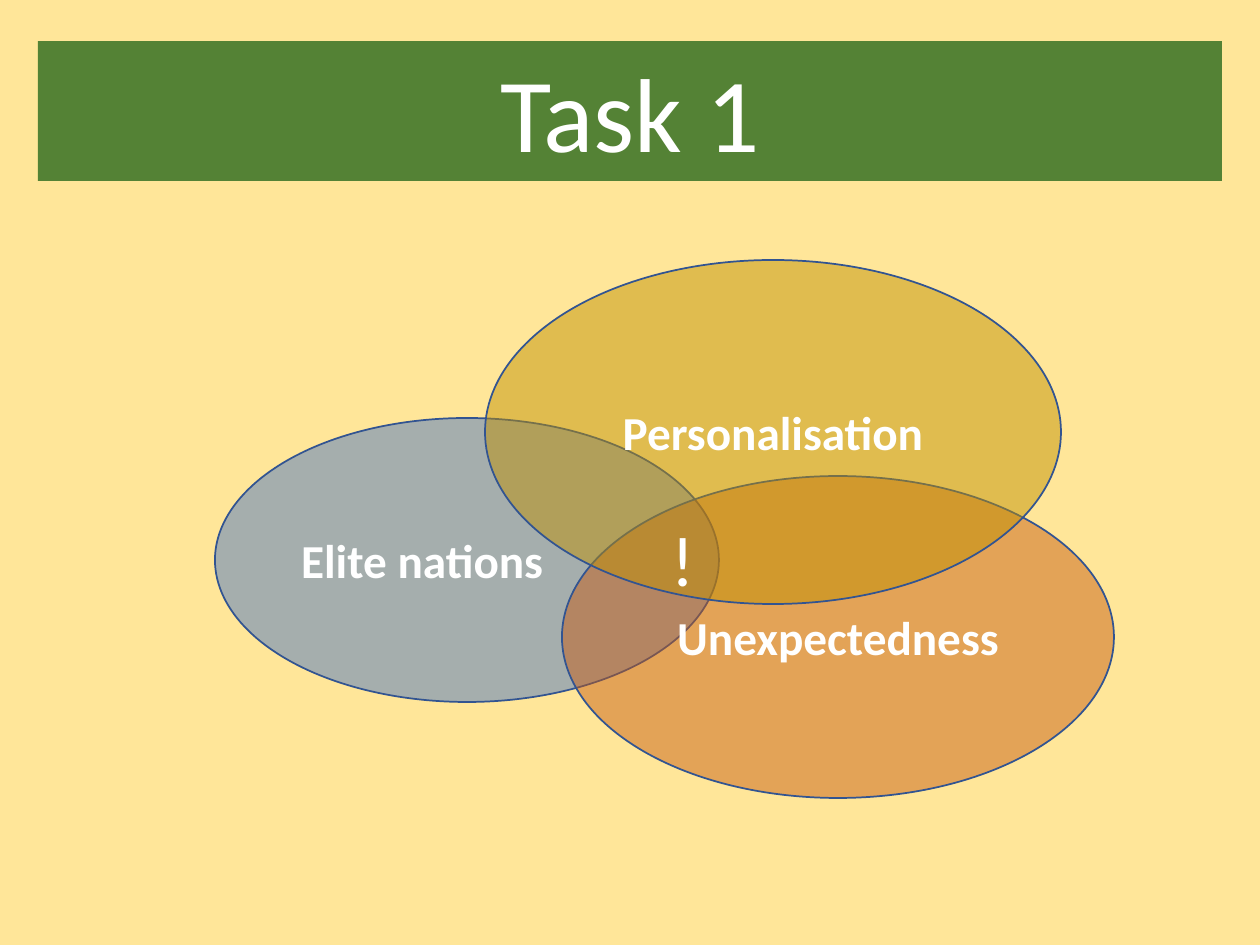
from lxml import etree
from pptx import Presentation
from pptx import util as u
from pptx.dml.color import RGBColor
from pptx.enum import shapes, text
from pptx.oxml.ns import qn

PX = u.Inches(1) / 126
ALPHA = 48
HUES = {
    "page": "FFE699",
    "band": "548235",
    "blue": "4472C4",
    "rust": "C55A11",
    "gold": "BF9000",
    "edge": "325491",
    "text": "FFFFFF",
}
LEFT, MID = text.PP_ALIGN.LEFT, text.PP_ALIGN.CENTER
OVALS = [
    ("Elite nations", "blue", LEFT, (215, 418, 504, 284)),
    ("Unexpectedness", "rust", MID, (562, 476, 552, 322)),
    ("Personalisation", "gold", MID, (485, 260, 576, 344)),
]


def emu(*sizes):
    return [u.Emu(round(size * PX)) for size in sizes]


def paint(fill, hue):
    fill.solid()
    fill.fore_color.rgb = RGBColor.from_string(HUES[hue])


def write(shape, words, size, align, anchor, bold=False):
    frame = shape.text_frame
    frame.text = words
    frame.word_wrap = True
    frame.auto_size = text.MSO_AUTO_SIZE.NONE
    frame.vertical_anchor = anchor
    para = frame.paragraphs[0]
    para.alignment = align
    font = para.font
    font.name, font.size, font.bold = "Calibri", u.Pt(size), bold
    font.color.rgb = RGBColor.from_string(HUES["text"])


def add_title(slide, words, box):
    title = slide.shapes.title
    title.left, title.top, title.width, title.height = emu(*box)
    paint(title.fill, "band")
    write(title, words, 60, MID, text.MSO_ANCHOR.TOP)


def add_oval(slide, words, hue, align, box):
    oval = slide.shapes.add_shape(shapes.MSO_SHAPE.OVAL, *emu(*box))
    oval.shadow.inherit = False
    paint(oval.fill, hue)
    color = oval._element.spPr.find(qn("a:solidFill"))[0]
    etree.SubElement(color, qn("a:alpha"), val=str(ALPHA * 1000))
    paint(oval.line.fill, "edge")
    oval.line.width = u.Pt(1)
    write(oval, words, 27, align, text.MSO_ANCHOR.MIDDLE, bold=True)


def add_mark(slide, words, box):
    mark = slide.shapes.add_textbox(*emu(*box))
    write(mark, words, 40.5, LEFT, text.MSO_ANCHOR.TOP)


def main():
    deck = Presentation()
    deck.slide_width, deck.slide_height = emu(1260, 945)
    slide = deck.slides.add_slide(deck.slide_layouts[5])
    paint(slide.background.fill, "page")
    add_title(slide, "Task 1", (38, 41, 1184, 140))
    for oval in OVALS:
        add_oval(slide, *oval)
    add_mark(slide, "!", (659, 509, 106, 98))
    deck.save("out.pptx")


if __name__ == "__main__":
    main()
